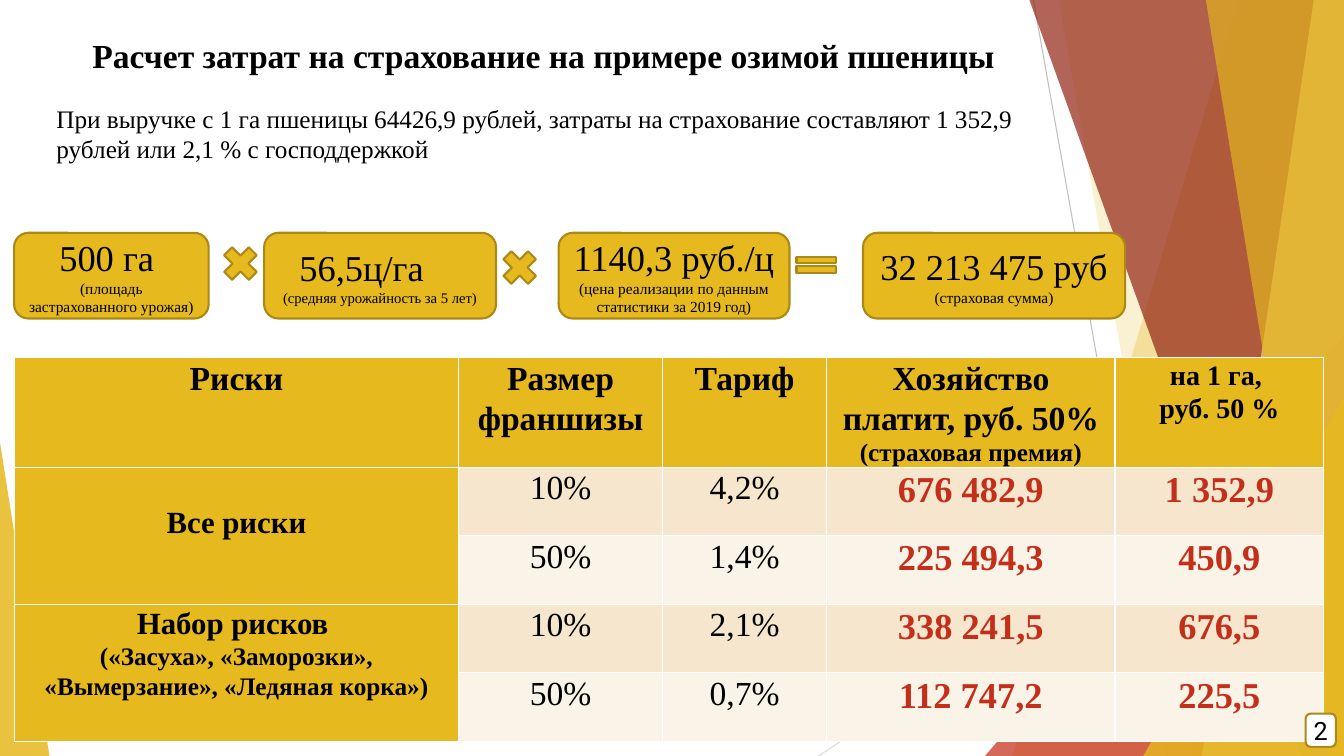
import pptx
import pptx.util
import pptx.dml.color
import pptx.enum.shapes
import pptx.enum.text
import pptx.oxml
import pptx.oxml.ns

WIDTH, HEIGHT = 13.33, 7.5
GOLD, GOLD_EDGE, BRICK, BLACK, WHITE = "E6B91E", "AA8916", "C42F1A", "000000", "FFFFFF"
BANDS = ("F5E6CD", "FAF3E8")
SERIF = "Times New Roman"
SHAPES = pptx.enum.shapes.MSO_SHAPE
ALIGN = pptx.enum.text.PP_ALIGN
ANCHOR = pptx.enum.text.MSO_ANCHOR
inches = pptx.util.Inches


def paint(target, color):
    target.solid()
    target.fore_color.rgb = pptx.dml.color.RGBColor.from_string(color)


def fade(shape, color, opacity):
    paint(shape.fill, color)
    shape.line.fill.background()
    shape.shadow.inherit = False
    color_element = shape.fill._xPr.find(".//" + pptx.oxml.ns.qn("a:srgbClr"))
    alpha = pptx.oxml.parse_xml(
        f'<a:alpha {pptx.oxml.ns.nsdecls("a")} val="{opacity * 1000}"/>')
    color_element.append(alpha)


def write(text_frame, lines, color=BLACK, bold=False, align=ALIGN.CENTER,
          font=SERIF, spacing=1.0):
    text_frame.word_wrap = True
    text_frame.text = "\n".join(text for text, size in lines)
    for paragraph, (text, size) in zip(text_frame.paragraphs, lines):
        paragraph.alignment = align
        paragraph.line_spacing = spacing
        paragraph.space_before = paragraph.space_after = pptx.util.Pt(0)
        for run in paragraph.runs:
            run.font.name = font
            run.font.size = pptx.util.Pt(size)
            run.font.bold = bold
            paint(run.font.fill, color)


def add_outlined(slide, kind, box, fill=GOLD):
    shape = slide.shapes.add_shape(kind, *map(inches, box))
    shape.shadow.inherit = False
    paint(shape.fill, fill)
    paint(shape.line.fill, GOLD_EDGE)
    shape.line.width = pptx.util.Pt(1.5)
    return shape


def add_backdrop(slide, box):
    left, top, width, height = box
    right, bottom = left + width, top + height
    group = slide.shapes.add_group_shape()

    def add_ray(start, end, color):
        ray = group.shapes.add_connector(
            pptx.enum.shapes.MSO_CONNECTOR.STRAIGHT, *map(inches, start + end))
        paint(ray.line.fill, color)
        ray.line.width = pptx.util.Pt(0.75)
        ray.element.spPr.append(
            pptx.oxml.parse_xml(f'<a:effectLst {pptx.oxml.ns.nsdecls("a")}/>'))

    def add_shard(upper, lower, color, opacity):
        corners = [(upper, top), (right, top), (right, bottom), (lower, bottom)]
        points = [(inches(x), inches(y)) for x, y in corners]
        builder = group.shapes.build_freeform(*points[0])
        builder.add_line_segments(points[1:], close=True)
        fade(builder.convert_to_shape(), color, opacity)

    def add_corner(x, corner_width, corner_height, apex, color, opacity):
        triangle = group.shapes.add_shape(
            SHAPES.ISOSCELES_TRIANGLE, inches(x), inches(bottom - corner_height),
            inches(corner_width), inches(corner_height))
        triangle.adjustments[0] = apex
        fade(triangle, color, opacity)

    add_ray((10.25, top), (11.58, bottom), "BFBFBF")
    add_ray((right, 4.03), (8.12, bottom), "D9D9D9")
    add_shard(12.28, 10.04, GOLD, 30)
    add_shard(10.5, 11.83, GOLD, 20)
    add_corner(right - 3.56, 3.56, 4.17, 1, BRICK, 72)
    add_shard(10.21, 12.91, "932313", 70)
    add_shard(13.03, 11.92, "F0D578", 70)
    add_shard(11.96, 13.18, GOLD, 65)
    add_corner(right - 1.99, 1.99, 3.57, 1, GOLD, 80)
    add_corner(left, 0.49, 3.11, 0, GOLD, 85)
    group.element.getparent().insert(2, group.element)


def fill_placeholder(placeholder, box, lines, **style):
    placeholder.left, placeholder.top, placeholder.width, placeholder.height = map(inches, box)
    text_frame = placeholder.text_frame
    write(text_frame, lines, **style)
    text_frame.auto_size = pptx.enum.text.MSO_AUTO_SIZE.NONE
    text_frame.vertical_anchor = ANCHOR.TOP
    for paragraph in text_frame.paragraphs:
        properties = paragraph._p.get_or_add_pPr()
        properties.set("marL", "0")
        properties.set("indent", "0")
        properties.append(
            pptx.oxml.parse_xml(f'<a:buNone {pptx.oxml.ns.nsdecls("a")}/>'))


def add_formula(slide, box):
    left, top, width, height = box
    factors = [
        (0, 1.93, [("500 га ", 26), ("(площадь застрахованного урожая)", 11)]),
        (2.48, 2.3, [("56,5ц/га", 26), ("(средняя урожайность за 5 лет)", 10.5)]),
        (5.4, 2.29, [("1140,3 руб./ц", 26),
                     ("(цена реализации по данным статистики за 2019 год)", 11)]),
        (8.42, 2.6, [("32 213 475 руб", 26), ("(страховая сумма)", 11)]),
    ]
    cards = []
    for offset, card_width, lines in factors:
        card = add_outlined(slide, SHAPES.ROUNDED_RECTANGLE,
                            (left + offset, top, card_width, height))
        write(card.text_frame, lines)
        card.text_frame.vertical_anchor = ANCHOR.MIDDLE
        cards.append(card)
    yield_value = cards[1].text_frame.paragraphs[0]
    yield_value.alignment = ALIGN.LEFT
    yield_value._p.get_or_add_pPr().set("marL", str(inches(0.21)))

    signs = [
        (SHAPES.MATH_MULTIPLY, 2.01, 0.07, 0.47, 0.47),
        (SHAPES.MATH_MULTIPLY, 4.78, 0.11, 0.47, 0.47),
        (SHAPES.MATH_EQUAL, 7.69, 0.18, 0.53, 0.27),
    ]
    for kind, across, down, sign_width, sign_height in signs:
        add_outlined(slide, kind, (left + across, top + down, sign_width, sign_height))


def add_risk_table(slide, box):
    headings = [
        [("Риски", 24)],
        [("Размер франшизы", 24)],
        [("Тариф", 24)],
        [("Хозяйство платит, руб. 50%", 24), ("(страховая премия)", 18)],
        [("на 1 га, ", 20), ("руб. 50 %", 20)],
    ]
    risks = {
        1: [("Все риски", 22)],
        3: [("Набор рисков ", 22),
            ("(«Засуха», «Заморозки», «Вымерзание», «Ледяная корка»)", 18)],
    }
    values = [
        ("10%", "4,2%", "676 482,9", "1 352,9"),
        ("50%", "1,4%", "225 494,3", "450,9"),
        ("10%", "2,1%", "338 241,5", "676,5"),
        ("50%", "0,7%", "112 747,2", "225,5"),
    ]
    header_height, row_height = 1.07, 0.68
    table = slide.shapes.add_table(len(values) + 1, len(headings), *map(inches, box)).table
    for column, column_width in zip(table.columns, (4.41, 2.02, 1.63, 2.86, 2.07)):
        column.width = inches(column_width)
    for index, row in enumerate(table.rows):
        row.height = inches(row_height if index else header_height)

    def fill_cell(row, column, lines, background, color=BLACK, bold=True):
        cell = table.cell(row, column)
        cell.margin_left = cell.margin_right = inches(0.07)
        cell.margin_top = cell.margin_bottom = 0
        paint(cell.fill, background)
        write(cell.text_frame, lines, color, bold, spacing=1.07)
        return cell

    for column, lines in enumerate(headings):
        fill_cell(0, column, lines, GOLD)
    for row, lines in risks.items():
        table.cell(row, 0).merge(table.cell(row + 1, 0))
        fill_cell(row, 0, lines, GOLD)
    table.cell(1, 0).margin_top = inches(0.36)
    for row, row_values in enumerate(values, 1):
        for column, value in enumerate(row_values, 1):
            money = column > 2
            fill_cell(row, column, [(value, 26 if money else 24)], BANDS[(row - 1) % 2],
                      BRICK if money else BLACK, money)


def add_page_number(slide, box):
    badge = add_outlined(slide, SHAPES.ROUNDED_RECTANGLE, box, WHITE)
    text_frame = badge.text_frame
    text_frame.margin_left = text_frame.margin_right = 0
    text_frame.margin_top = text_frame.margin_bottom = 0
    text_frame.vertical_anchor = ANCHOR.MIDDLE
    write(text_frame, [("2", 18)], font="Roboto")


def main():
    presentation = pptx.Presentation()
    presentation.slide_width, presentation.slide_height = inches(WIDTH), inches(HEIGHT)
    slide = presentation.slides.add_slide(presentation.slide_layouts[1])
    add_backdrop(slide, (0, 0, WIDTH, HEIGHT))
    fill_placeholder(slide.shapes.title, (0.69, 0.3, 9.4, 0.45),
                     [("Расчет затрат на страхование на примере озимой пшеницы", 24)],
                     bold=True)
    fill_placeholder(slide.placeholders[1], (0.46, 0.97, 9.87, 1.11),
                     [("При выручке с 1 га пшеницы 64426,9 рублей, затраты на страхование "
                       "составляют 1 352,9 рублей или 2,1 % с господдержкой", 18)],
                     align=ALIGN.LEFT)
    add_formula(slide, (0.14, 2.31, 11.02, 0.85))
    add_risk_table(slide, (0.14, 3.55, 12.99, 3.79))
    add_page_number(slide, (12.95, 7.08, 0.3, 0.33))
    presentation.save("out.pptx")


if __name__ == "__main__":
    main()
